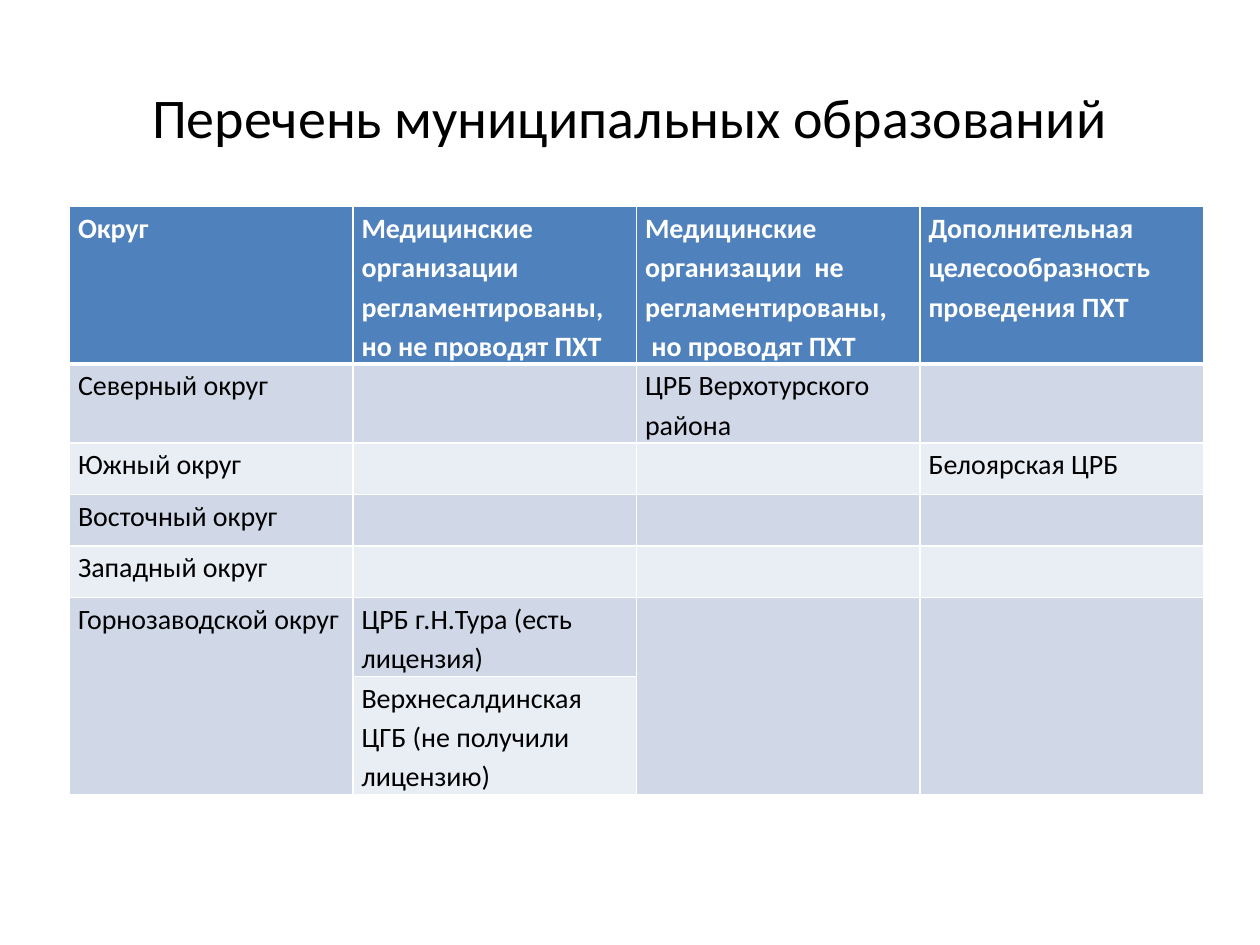
import pptx
import pptx.util
import pptx.oxml
import pptx.dml.color
import pptx.enum.text

Inches = pptx.util.Inches
Pt = pptx.util.Pt
RGBColor = pptx.dml.color.RGBColor

BLACK = RGBColor(0x00, 0x00, 0x00)
WHITE = RGBColor(0xFF, 0xFF, 0xFF)
HEADER_BLUE = RGBColor(0x4F, 0x81, 0xBD)
BANDS = (RGBColor(0xD0, 0xD8, 0xE8), RGBColor(0xE9, 0xED, 0xF4))
FONT = "Calibri"

TITLE = "Перечень муниципальных образований"
ROWS = [
    ["Округ",
     "Медицинские организации регламентированы,\nно не проводят ПХТ",
     "Медицинские организации  не регламентированы,\n но проводят ПХТ",
     "Дополнительная\nцелесообразность\nпроведения ПХТ"],
    ["Северный округ", "", "ЦРБ Верхотурского района", ""],
    ["Южный округ", "", "", "Белоярская ЦРБ"],
    ["Восточный округ", "", "", ""],
    ["Западный округ", "", "", ""],
    ["Горнозаводской округ", "ЦРБ г.Н.Тура (есть лицензия)", "", ""],
    ["", "Верхнесалдинская ЦГБ (не получили лицензию)", "", ""],
]
ROW_HEIGHTS = [1.24, 0.62, 0.41, 0.41, 0.41, 0.62, 0.93]
COLUMN_WIDTH = 2.25
MERGED_COLUMNS = (0, 2, 3)


def style_span(span, size, color, bold=False):
    span.font.name = FONT
    span.font.size = Pt(size)
    span.font.bold = bold
    span.font.color.rgb = color


def add_borders(cell, widths):
    properties = cell._tc.get_or_add_tcPr()
    for position, (side, width) in enumerate(widths.items()):
        line = pptx.oxml.parse_xml(
            f'<a:ln{side} xmlns:a="http://schemas.openxmlformats.org/drawingml/2006/main" '
            f'w="{Pt(width)}"><a:solidFill><a:srgbClr val="{WHITE}"/></a:solidFill></a:ln{side}>')
        properties.insert(position, line)


def fill_cell(cell, text, row):
    header = row == 0
    cell.fill.solid()
    cell.fill.fore_color.rgb = HEADER_BLUE if header else BANDS[(row - 1) % 2]
    add_borders(cell, {"L": 1, "R": 1, "T": 3 if row == 1 else 1, "B": 3 if header else 1})
    if not text:
        return
    cell.margin_left = cell.margin_right = Inches(0.07)
    cell.margin_top = cell.margin_bottom = 0
    cell.text_frame.text = text
    for para in cell.text_frame.paragraphs:
        para.line_spacing = 1.15
        for span in para.runs:
            style_span(span, 16, WHITE if header else BLACK, header)


def main():
    deck = pptx.Presentation()
    deck.slide_width, deck.slide_height = Inches(10), Inches(7.5)
    page = deck.slides.add_slide(deck.slide_layouts[5])

    title = page.shapes.title
    title.left, title.top = Inches(0.5), Inches(0.3)
    title.width, title.height = Inches(9), Inches(1.25)
    title.text_frame.text = TITLE
    title.text_frame.vertical_anchor = pptx.enum.text.MSO_ANCHOR.MIDDLE
    para = title.text_frame.paragraphs[0]
    para.alignment = pptx.enum.text.PP_ALIGN.CENTER
    style_span(para.runs[0], 32, BLACK)

    columns = len(ROWS[0])
    table = page.shapes.add_table(
        len(ROWS), columns, Inches(0.55), Inches(1.64),
        Inches(COLUMN_WIDTH * columns), Inches(sum(ROW_HEIGHTS))).table
    for column in table.columns:
        column.width = Inches(COLUMN_WIDTH)
    for row, (texts, height) in enumerate(zip(ROWS, ROW_HEIGHTS)):
        table.rows[row].height = Inches(height)
        for column, text in enumerate(texts):
            fill_cell(table.cell(row, column), text, row)
    last = len(ROWS) - 1
    for column in MERGED_COLUMNS:
        table.cell(last - 1, column).merge(table.cell(last, column))

    deck.save("out.pptx")


if __name__ == "__main__":
    main()
